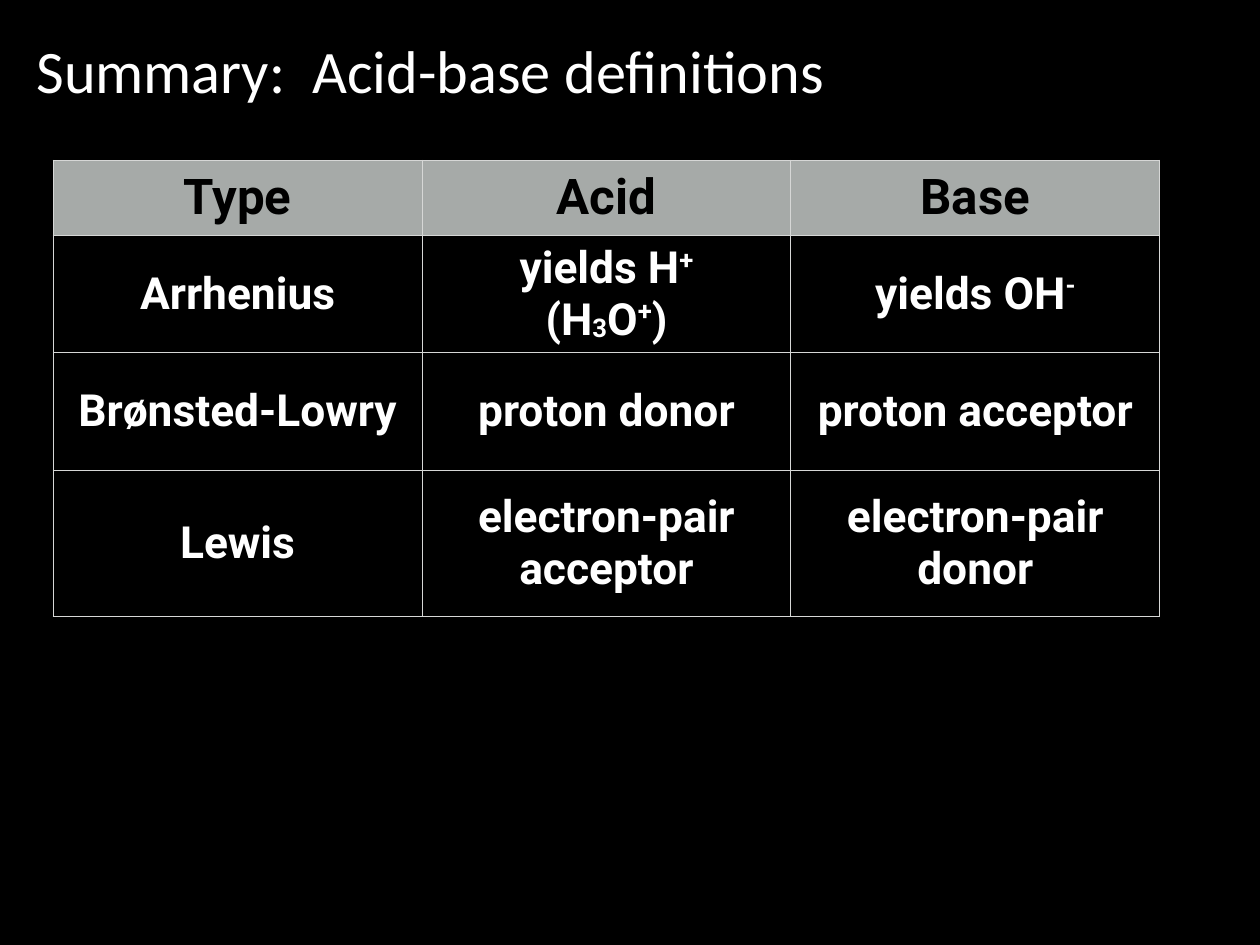
import pptx
import pptx.dml.color
import pptx.enum.text
import pptx.oxml.ns
import pptx.util
from lxml import etree

Inches = pptx.util.Inches
Pt = pptx.util.Pt
COLORS = {
    "background": "000000",
    "text": "FFFFFF",
    "header_fill": "A6AAA8",
    "header_text": "000000",
    "border": "D6D7D6",
}
INSET = 0.06
SUPER, SUB = 32, -6
HEADINGS = ["Type", "Acid", "Base"]
DEFINITIONS = [
    [
        [["Arrhenius"]],
        [["yields H", ("+", SUPER)], ["(H", ("3", SUB), "O", ("+", SUPER), ")"]],
        [["yields OH", ("-", SUPER)]],
    ],
    [[["Brønsted-Lowry"]], [["proton donor"]], [["proton acceptor"]]],
    [[["Lewis"]], [["electron-pair acceptor"]], [["electron-pair donor"]]],
]
ROW_HEIGHTS = [0.85, 1.32, 1.33, 1.65]


def rgb(role):
    return pptx.dml.color.RGBColor.from_string(COLORS[role])


def style_font(font, face, size, role, bold):
    font.name = face
    font.size = Pt(size)
    font.bold = bold
    font.color.rgb = rgb(role)


def set_insets(target):
    target.margin_left = target.margin_right = Inches(INSET)
    target.margin_top = target.margin_bottom = Inches(INSET)


def add_title(slide, left, top, width, height):
    title = slide.shapes.title
    title.left, title.top = Inches(left), Inches(top)
    title.width, title.height = Inches(width), Inches(height)
    frame = title.text_frame
    frame.text = "Summary:  Acid-base definitions"
    frame.word_wrap = True
    frame.auto_size = pptx.enum.text.MSO_AUTO_SIZE.SHAPE_TO_FIT_TEXT
    frame.vertical_anchor = pptx.enum.text.MSO_ANCHOR.MIDDLE
    set_insets(frame)
    heading = frame.paragraphs[0]
    heading.alignment = pptx.enum.text.PP_ALIGN.LEFT
    style_font(heading.runs[0].font, "Calibri", 49, "text", False)


def add_borders(cell):
    properties = cell._tc.get_or_add_tcPr()
    qn = pptx.oxml.ns.qn
    for side in ("a:lnL", "a:lnR", "a:lnT", "a:lnB"):
        border = etree.SubElement(properties, qn(side), w=str(Pt(1)))
        fill = etree.SubElement(border, qn("a:solidFill"))
        etree.SubElement(fill, qn("a:srgbClr"), val=COLORS["border"])


def fill_cell(cell, lines, size, role):
    frame = cell.text_frame
    for index, segments in enumerate(lines):
        line = frame.add_paragraph() if index else frame.paragraphs[0]
        line.alignment = pptx.enum.text.PP_ALIGN.CENTER
        for segment in segments:
            wording, baseline = (segment, 0) if isinstance(segment, str) else segment
            run = line.add_run()
            run.text = wording
            style_font(run.font, "Roboto", size, role, True)
            if baseline:
                run._r.get_or_add_rPr().set("baseline", str(baseline * 1000))
    cell.vertical_anchor = pptx.enum.text.MSO_ANCHOR.MIDDLE
    set_insets(cell)
    add_borders(cell)


def add_definitions(slide, left, top, width):
    definitions = slide.shapes.add_table(
        len(ROW_HEIGHTS), len(HEADINGS), Inches(left), Inches(top),
        Inches(width), Inches(sum(ROW_HEIGHTS)),
    ).table
    definitions.first_row = definitions.horz_banding = False
    for column in definitions.columns:
        column.width = Inches(width / len(HEADINGS))
    for row, height in zip(definitions.rows, ROW_HEIGHTS):
        row.height = Inches(height)
    for column, heading in enumerate(HEADINGS):
        cell = definitions.cell(0, column)
        fill_cell(cell, [[heading]], 40, "header_text")
        cell.fill.solid()
        cell.fill.fore_color.rgb = rgb("header_fill")
    for row, entries in enumerate(DEFINITIONS, 1):
        for column, lines in enumerate(entries):
            cell = definitions.cell(row, column)
            fill_cell(cell, lines, 36, "text")
            cell.fill.background()


def main():
    deck = pptx.Presentation()
    deck.slide_width, deck.slide_height = Inches(14.22), Inches(10.67)
    slide = deck.slides.add_slide(deck.slide_layouts[5])
    slide.background.fill.solid()
    slide.background.fill.fore_color.rgb = rgb("background")
    add_title(slide, 0.35, 0.34, 10.03, 0.89)
    add_definitions(slide, 0.6, 1.81, 12.49)
    deck.save("out.pptx")


if __name__ == "__main__":
    main()
